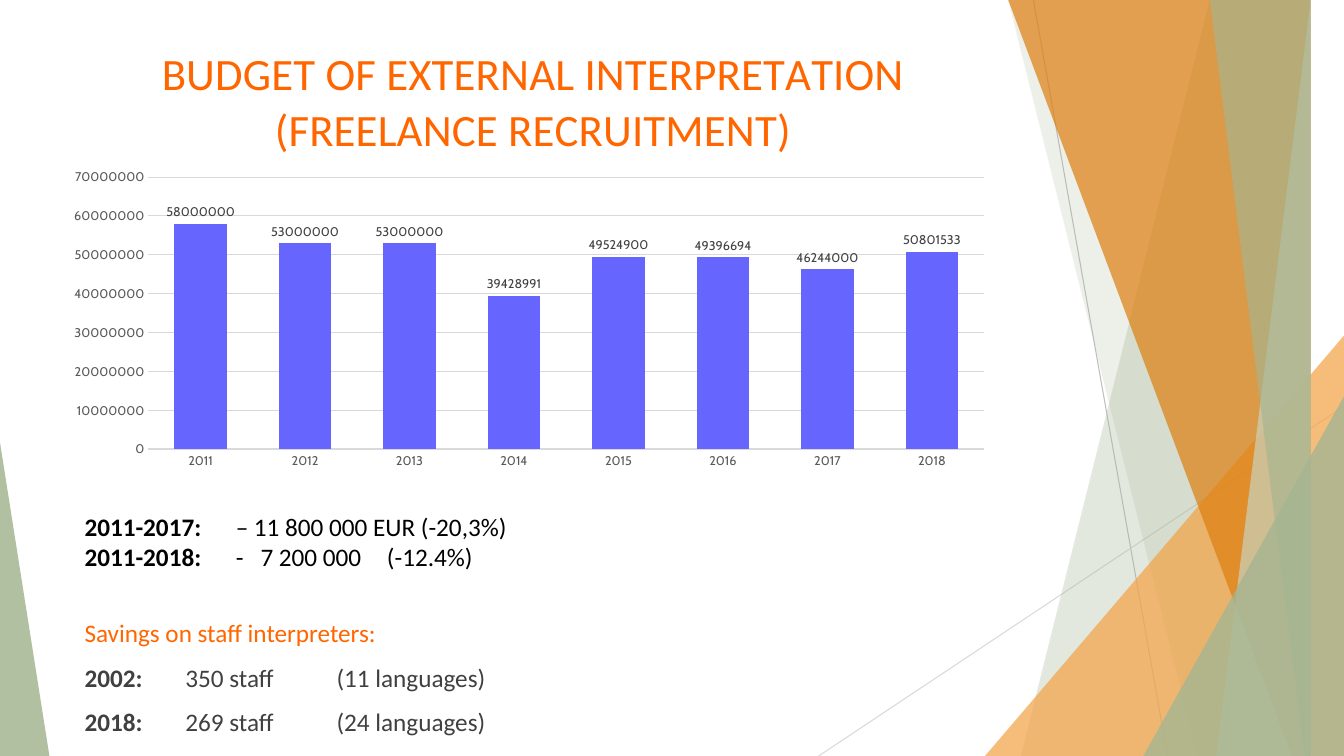
from lxml import etree
from pptx import Presentation, util as u
from pptx.chart.data import CategoryChartData
from pptx.dml.color import RGBColor
from pptx.enum import chart as c, shapes, text
from pptx.oxml import parse_xml
from pptx.oxml.ns import nsdecls, qn

COLOURS = {
    "sage": "A5B592", "pale": "C9D3BE", "orange": "F3A447", "rust": "DD7E0E",
    "heading": "FF6600", "bar": "6666FF", "black": "000000", "body": "404040",
    "axis": "595959", "grid": "D9D9D9", "ray": "BFBFBF",
}
RGB = {name: RGBColor.from_string(value) for name, value in COLOURS.items()}
WIDTH, HEIGHT = 13.33, 7.5
LEFT, COLUMN = 0.74, 9.4
TAB = 0.5


def style(font, colour, **values):
    for name, value in values.items():
        setattr(font, name, value)
    font.color.rgb = RGB[colour]


def layout_at(parent, index, **shares):
    """Place a chart part by shares of the chart's size."""
    layout = etree.Element(qn("c:layout"))
    manual = etree.SubElement(layout, qn("c:manualLayout"))
    for name, value in shares.items():
        etree.SubElement(manual, qn("c:" + name)).set("val", str(value))
    for old in parent.findall(qn("c:layout")):
        parent.remove(old)
    parent.insert(index, layout)


deck = Presentation()
deck.slide_width, deck.slide_height = u.Inches(WIDTH), u.Inches(HEIGHT)
page = deck.slides.add_slide(deck.slide_layouts[6])

# Thin rays behind the facets
for x1, y1, x2, y2, colour in [
    (10.25, 0, 11.58, HEIGHT, "ray"),
    (WIDTH, 4.03, 8.12, HEIGHT, "grid"),
]:
    ray = page.shapes.add_connector(
        shapes.MSO_CONNECTOR.STRAIGHT, *map(u.Inches, (x1, y1, x2, y2)))
    ray.line.color.rgb, ray.line.width = RGB[colour], u.Pt(0.75)
    etree.SubElement(ray._element.spPr, qn("a:effectLst"))

# Facets: bands run to the right edge, triangles stand on the bottom edge
facets = [
    ("band", 12.28, 10.04, "sage", 30),
    ("band", 10.5, 11.83, "sage", 20),
    ("triangle", 9.77, 3.33, 3.56, 1, "orange", 72),
    ("band", 10.21, 12.91, "rust", 70),
    ("band", 13.03, 11.92, "pale", 70),
    ("band", 11.96, 13.18, "sage", 65),
    ("triangle", 11.34, 3.93, 1.99, 1, "sage", 80),
    ("triangle", 0, 4.39, 0.49, 0, "sage", 85),
]
for kind, *place, colour, opacity in facets:
    if kind == "band":
        top_x, bottom_x = place
        outline = page.shapes.build_freeform(top_x, 0, scale=u.Inches(1))
        outline.add_line_segments(
            [(WIDTH, 0), (WIDTH, HEIGHT), (bottom_x, HEIGHT)], close=True)
        facet = outline.convert_to_shape()
    else:
        left, top, width, apex = place
        facet = page.shapes.add_shape(
            shapes.MSO_SHAPE.ISOSCELES_TRIANGLE,
            *map(u.Inches, (left, top, width, HEIGHT - top)))
        facet.adjustments[0] = apex
    facet.shadow.inherit = False
    facet.line.fill.background()
    facet.fill.solid()
    facet.fill.fore_color.rgb = RGB[colour]
    tint = facet._element.spPr.find(qn("a:solidFill"))[0]
    etree.SubElement(tint, qn("a:alpha")).set("val", str(opacity * 1000))

# Text blocks: top, height, anchor, space before, lines of (bold, plain, colour)
blocks = [
    (5.1, 0.62, text.MSO_ANCHOR.BOTTOM, 0, [
        ("2011-2017:", "\t– 11 800 000 EUR (-20,3%)", "black"),
        ("2011-2018:", "\t-   7 200 000\t(-12.4%)", "black")]),
    (6.08, 1.36, text.MSO_ANCHOR.TOP, 10, [
        ("", "Savings on staff interpreters:", "heading"),
        ("2002:", "\t350 staff\t\t(11 languages)", "body"),
        ("2018:", "\t269 staff\t\t(24 languages)", "body")]),
]
for top, height, anchor, gap, lines in blocks:
    box = page.shapes.add_textbox(*map(u.Inches, (LEFT, top, COLUMN, height)))
    frame = box.text_frame
    frame.word_wrap, frame.vertical_anchor = True, anchor
    for number, (bold, plain, colour) in enumerate(lines):
        para = frame.add_paragraph() if number else frame.paragraphs[0]
        para.space_before = u.Pt(gap)
        stops = "".join(
            f'<a:tab pos="{u.Inches(TAB * n)}" algn="l"/>' for n in range(1, 9))
        para._p.get_or_add_pPr().append(
            parse_xml(f'<a:tabLst {nsdecls("a")}>{stops}</a:tabLst>'))
        for words, weight in ((bold, True), (plain, False)):
            if words:
                span = para.add_run()
                span.text = words
                style(span.font, colour, name="Calibri", size=u.Pt(18), bold=weight)

# Budget chart
budget = CategoryChartData(number_format="General")
budget.categories = [str(year) for year in range(2011, 2019)]
budget.add_series("Series 1", [58000000, 53000000, 53000000, 39428991,
                               49524900, 49396694, 46244000, 50801533])
chart = page.shapes.add_chart(
    c.XL_CHART_TYPE.COLUMN_CLUSTERED,
    *map(u.Inches, (0.54, 0.24, COLUMN, 4.5)), budget).chart
style(chart.font, "black", name="Cabin", size=u.Pt(10))
chart.has_legend = False

# Chart title
chart.has_title = True
title = chart.chart_title
title.include_in_layout = False
title.text_frame.text = "BUDGET OF EXTERNAL INTERPRETATION\n(FREELANCE RECRUITMENT)"
for para in title.text_frame.paragraphs:
    style(para.runs[0].font, "heading", name="Calibri", size=u.Pt(32), bold=False)
layout_at(title._element, 1, xMode="edge", yMode="edge", x=0.11, y=0.04)
layout_at(chart._chartSpace.chart.plotArea, 0, layoutTarget="inner",
          xMode="edge", yMode="edge", x=0.099, y=0.337, w=0.882, h=0.6)

# Bars and their labels
plot = chart.plots[0]
plot.gap_width, plot.overlap, plot.vary_by_categories = 100, -24, False
bars = plot.series[0]
bars.format.fill.solid()
bars.format.fill.fore_color.rgb = RGB["bar"]
labels = bars.data_labels
labels.show_value, labels.position = True, c.XL_LABEL_POSITION.OUTSIDE_END
style(labels.font, "body", name="Cabin", size=u.Pt(9))

# Axes
for axis in (chart.category_axis, chart.value_axis):
    axis.major_tick_mark = axis.minor_tick_mark = c.XL_TICK_MARK.NONE
    style(axis.tick_labels.font, "axis", name="Cabin", size=u.Pt(9))
base, scale = chart.category_axis, chart.value_axis
base.format.line.color.rgb, base.format.line.width = RGB["grid"], u.Pt(1)
scale.format.line.fill.background()
scale.minimum_scale, scale.maximum_scale, scale.major_unit = 0, 70000000, 10000000
grid = scale.major_gridlines.format.line
grid.color.rgb, grid.width = RGB["grid"], u.Pt(0.75)

deck.save("out.pptx")
